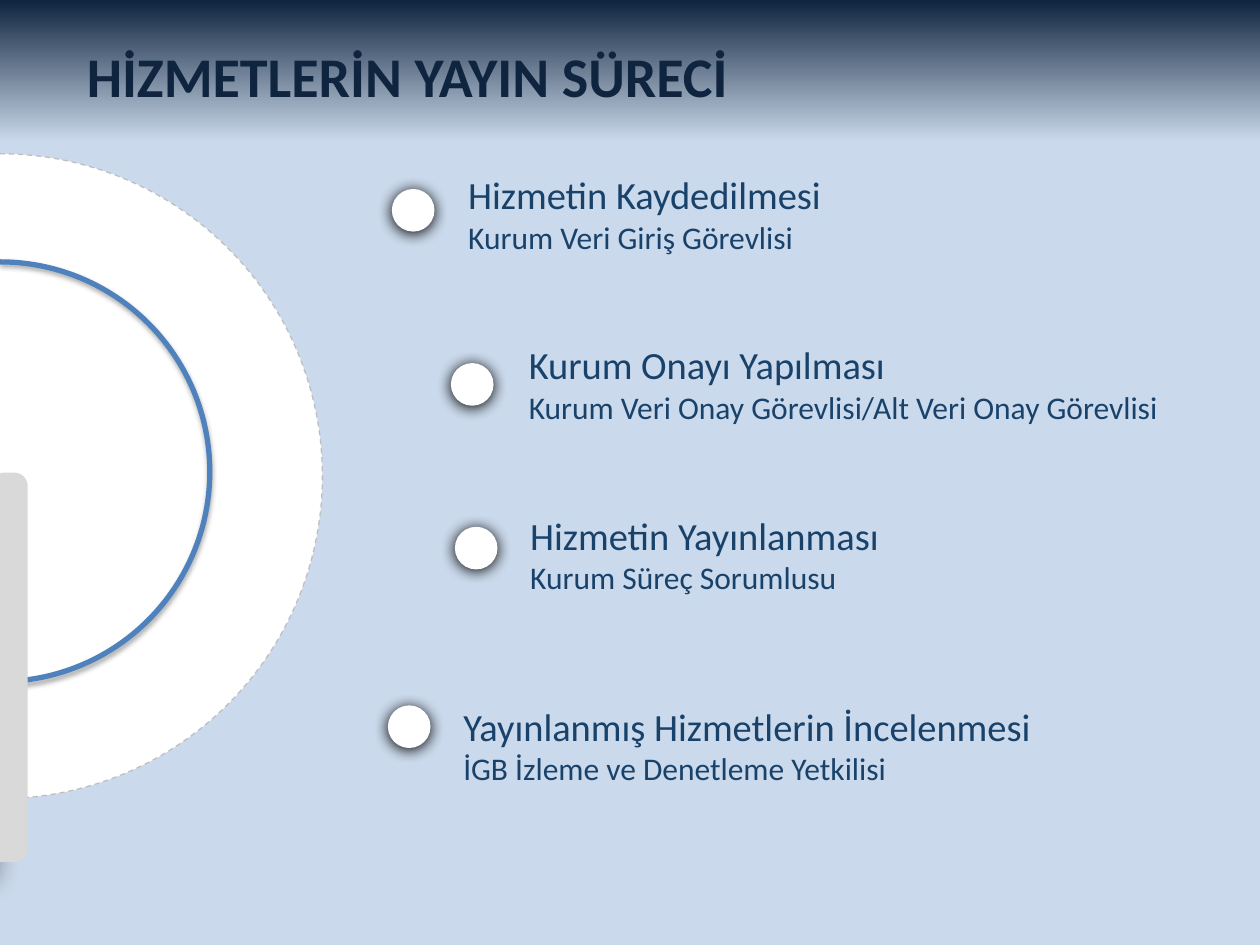
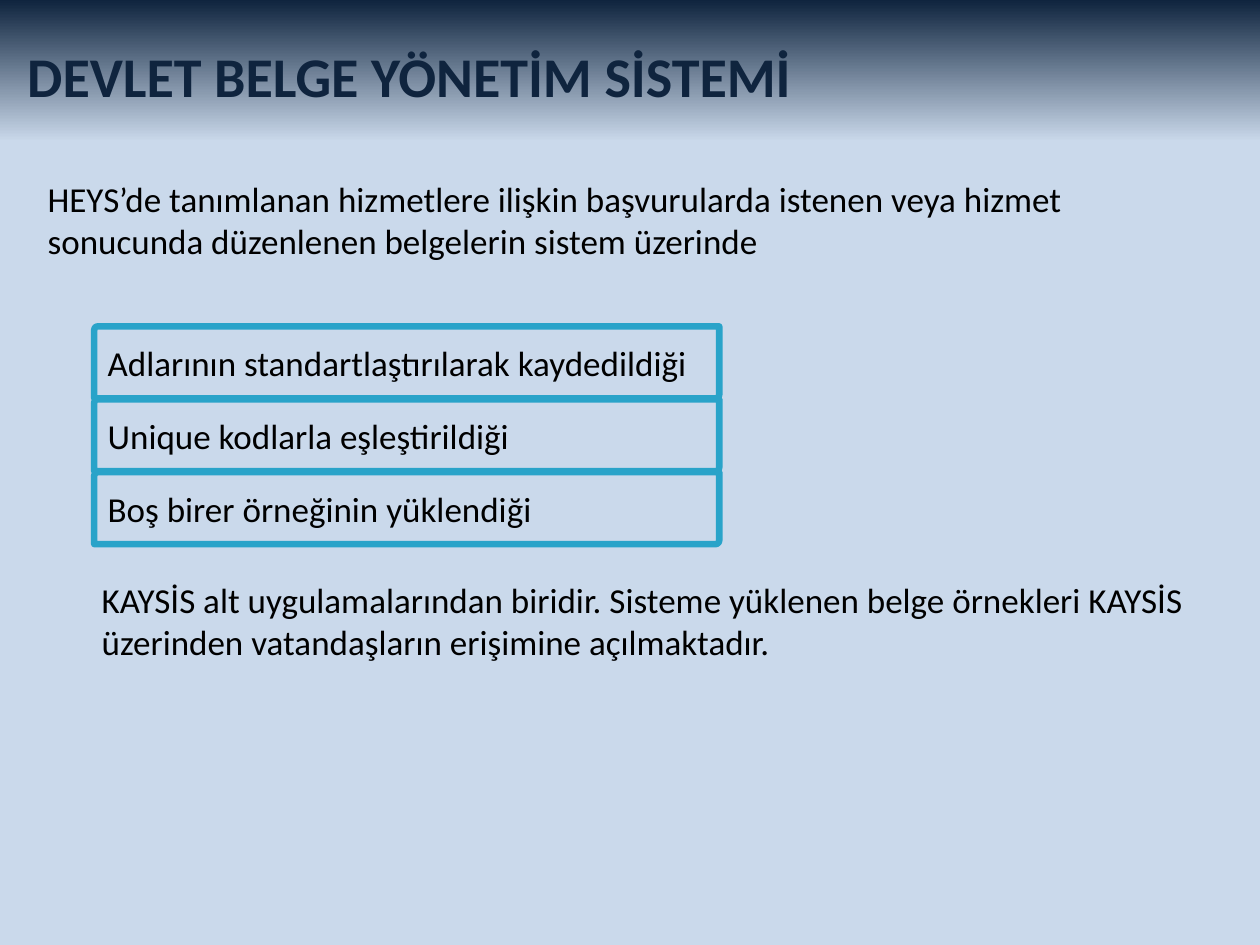
from lxml import etree
from pptx import Presentation
from pptx.dml.color import RGBColor
from pptx.enum.dml import MSO_LINE
from pptx.enum.shapes import MSO_SHAPE as SHAPE
from pptx.enum.text import MSO_ANCHOR as ANCHOR, PP_ALIGN as ALIGN
from pptx.oxml.ns import qn
from pptx.util import Cm, Pt

NAVY = RGBColor(0x0F, 0x24, 0x3E)
PALE_BLUE = RGBColor(0xCA, 0xD9, 0xEB)
TEXT_BLUE = RGBColor(0x19, 0x42, 0x6B)
RING_BLUE = RGBColor(0x4F, 0x81, 0xBD)
CYAN = RGBColor(0x29, 0xA3, 0xC9)
DASH_GREY = RGBColor(0xBF, 0xBF, 0xBF)
BAR_GREY = RGBColor(0xD9, 0xD9, 0xD9)
WHITE = RGBColor(0xFF, 0xFF, 0xFF)
BLACK = RGBColor(0, 0, 0)

TITLE = {"size": Pt(32), "bold": True, "color": NAVY}
STEP = {"size": Pt(22), "color": TEXT_BLUE}
ROLE = {"size": Pt(18), "color": TEXT_BLUE}
BODY = {"size": Pt(20), "color": BLACK}

DOT_SIZE = 0.86
STEPS = [
    ("Hizmetin Kaydedilmesi", "Kurum Veri Giriş Görevlisi", (9.19, 3.33, 13.51), (7.9, 3.81)),
    ("Kurum Onayı Yapılması", "Kurum Veri Onay Görevlisi/Alt Veri Onay Görevlisi",
     (10.41, 6.76, 14.48), (9.09, 7.32)),
    ("Hizmetin Yayınlanması", "Kurum Süreç Sorumlusu", (10.44, 10.19, 14.48), (9.17, 10.62)),
    ("Yayınlanmış Hizmetlerin İncelenmesi", "İGB İzleme ve Denetleme Yetkilisi",
     (9.09, 14.05, 13.77), (7.82, 14.22)),
]

FEATURES = [
    "Adlarının standartlaştırılarak kaydedildiği",
    "Unique kodlarla eşleştirildiği",
    "Boş birer örneğinin yüklendiği",
]
FEATURE_TOP, FEATURE_STEP = 6.58, 1.47


def write_lines(tf, lines):
    """Fill a text frame with one left-aligned paragraph per (text, format) pair."""
    tf.word_wrap = True
    for i, (text, fmt) in enumerate(lines):
        p = tf.add_paragraph() if i else tf.paragraphs[0]
        p.alignment = ALIGN.LEFT
        r = p.add_run()
        r.text = text
        r.font.name = "Calibri"
        for name, value in fmt.items():
            if name == "color":
                r.font.color.rgb = value
            else:
                setattr(r.font, name, value)


def add_text(s, left, top, width, height, lines):
    """Add a text box measured in centimetres."""
    box = s.shapes.add_textbox(Cm(left), Cm(top), Cm(width), Cm(height))
    write_lines(box.text_frame, lines)


def add_shadow(sp, alpha, blur, distance, angle):
    """Give a shape a black outer shadow; sizes in points, alpha in percent."""
    effects = sp._element.spPr.find(qn("a:effectLst"))
    shadow = etree.SubElement(effects, qn("a:outerShdw"), {
        "blurRad": str(Pt(blur)), "dist": str(Pt(distance)),
        "dir": str(angle * 60000), "algn": "ctr", "rotWithShape": "0"})
    color = etree.SubElement(shadow, qn("a:srgbClr"), val=str(BLACK))
    etree.SubElement(color, qn("a:alpha"), val=str(alpha * 1000))


def add_figure(s, kind, box, fill=None, line=None, adjust=(), shadow=None):
    """Add a preset shape with optional fill, (colour, points) line and shadow."""
    sp = s.shapes.add_shape(kind, *(Cm(v) for v in box))
    sp.shadow.inherit = False
    for i, value in enumerate(adjust):
        sp.adjustments[i] = value
    if fill is None:
        sp.fill.background()
    else:
        sp.fill.solid()
        sp.fill.fore_color.rgb = fill
    if line is None:
        sp.line.fill.background()
    else:
        color, points = line
        sp.line.color.rgb = color
        sp.line.width = Pt(points)
    if shadow:
        add_shadow(sp, *shadow)
    return sp


def add_half_ring(s, center, diameter, end, **style):
    """Add an arc centred on the slide's left edge, from the top to the given end."""
    box = (-diameter / 2, center - diameter / 2, diameter, diameter)
    return add_figure(s, SHAPE.ARC, box, adjust=(162, end), **style)


def add_titled_slide(prs, title, left, width):
    """Add a blank slide with the shared gradient background and a title."""
    s = prs.slides.add_slide(prs.slide_layouts[6])
    fill = s.background.fill
    fill.gradient()
    fill.gradient_angle = 270
    for stop, (position, color) in zip(fill.gradient_stops, [(0, NAVY), (0.15, PALE_BLUE)]):
        stop.position = position
        stop.color.rgb = color
    add_text(s, left, 0.71, width, 1.63, [(title, TITLE)])
    return s


def build_process(prs):
    """Build the slide with the four publishing steps."""
    s = add_titled_slide(prs, "HİZMETLERİN YAYIN SÜRECİ", 1.5, 20.73)
    disc = add_half_ring(s, 9.6, 13, 53.71, fill=WHITE, line=(DASH_GREY, 0.75))
    disc.line.dash_style = MSO_LINE.DASH
    for step, role, (left, top, width), dot in STEPS:
        add_text(s, left, top, width, 1.96, [(step, STEP), (role, ROLE)])
        add_figure(s, SHAPE.OVAL, (*dot, DOT_SIZE, DOT_SIZE), fill=WHITE,
                   shadow=(100, 8.5, 1, 90))
    add_half_ring(s, 9.51, 8.46, 53.6, line=(RING_BLUE, 3), shadow=(35, 3.1, 1.8, 90))
    add_figure(s, SHAPE.ROUNDED_RECTANGLE, (-0.2, 9.53, 0.76, 7.85), fill=BAR_GREY,
               adjust=(0.35,), shadow=(28, 11.8, 19.7, 141))


def build_document_system(prs):
    """Build the slide on the document system and its three features."""
    s = add_titled_slide(prs, "DEVLET BELGE YÖNETİM SİSTEMİ", 0.3, 19)
    add_text(s, 0.71, 3.45, 23.6, 1.96, [(
        "HEYS’de tanımlanan hizmetlere ilişkin başvurularda istenen veya hizmet "
        "sonucunda düzenlenen belgelerin sistem üzerinde", BODY)])
    for i, feature in enumerate(FEATURES):
        box = (1.9, FEATURE_TOP + i * FEATURE_STEP, 12.6, 1.45)
        sp = add_figure(s, SHAPE.ROUND_2_DIAG_RECTANGLE, box, line=(CYAN, 3.75),
                        adjust=(0.05, 0))
        sp.text_frame.vertical_anchor = ANCHOR.MIDDLE
        write_lines(sp.text_frame, [(feature, BODY)])
    add_text(s, 1.8, 11.53, 23.6, 1.96, [(
        "KAYSİS alt uygulamalarından biridir. Sisteme yüklenen belge örnekleri KAYSİS "
        "üzerinden vatandaşların erişimine açılmaktadır.", BODY)])


def main():
    """Build both slides and save the presentation."""
    prs = Presentation()
    prs.slide_width, prs.slide_height = Cm(25.4), Cm(19.05)
    build_process(prs)
    build_document_system(prs)
    prs.save("out.pptx")


if __name__ == "__main__":
    main()
